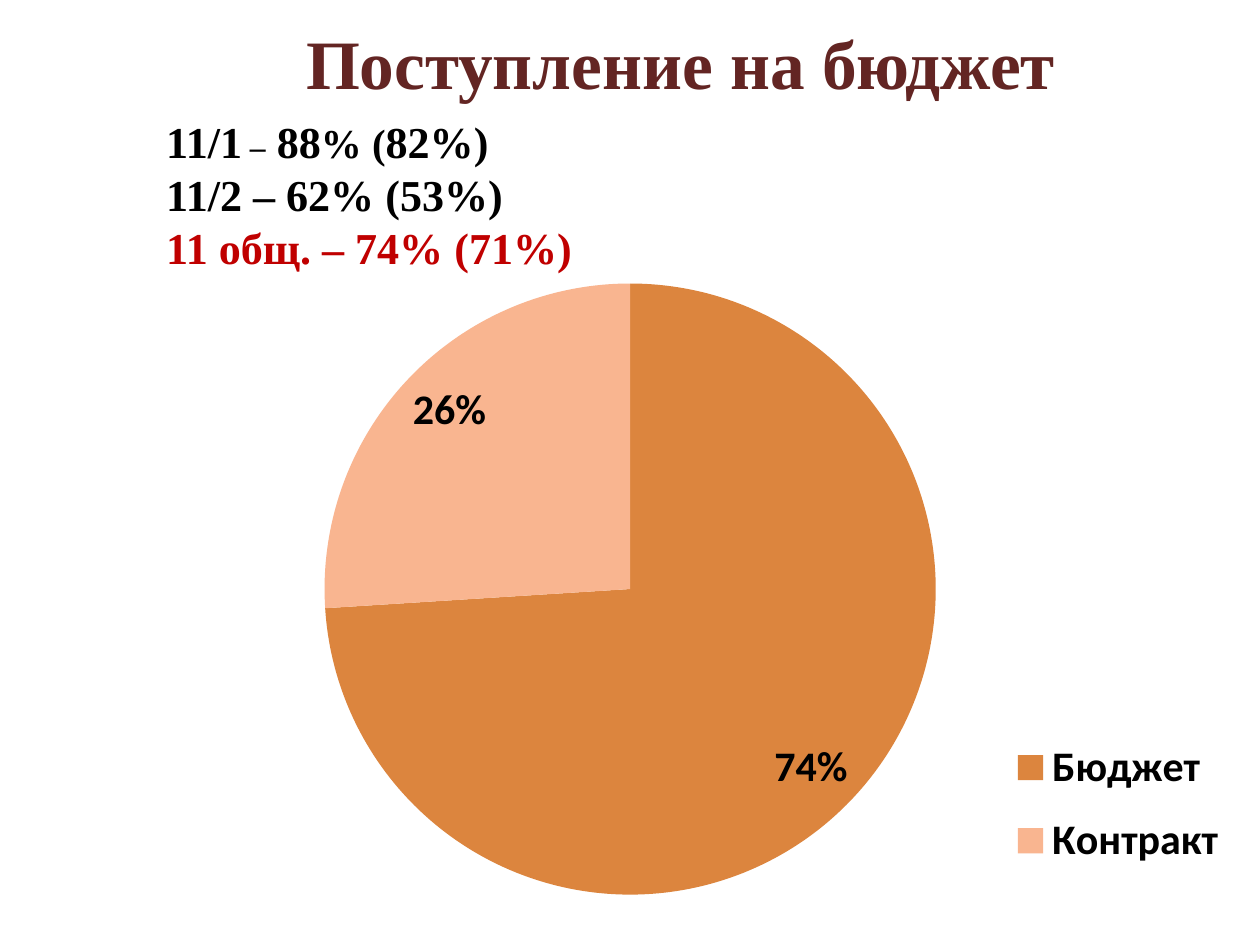
"""Build a slide showing the share of pupils admitted to state-funded places."""
from lxml import etree
from pptx import Presentation
from pptx.chart.data import CategoryChartData
from pptx.dml.color import RGBColor
from pptx.enum.chart import XL_CHART_TYPE, XL_LABEL_POSITION, XL_LEGEND_POSITION
from pptx.enum.text import PP_ALIGN
from pptx.util import Pt

PIE = XL_CHART_TYPE.PIE
INSIDE_END = XL_LABEL_POSITION.INSIDE_END
LEGEND_RIGHT = XL_LEGEND_POSITION.RIGHT
CENTER = PP_ALIGN.CENTER
LEFT = PP_ALIGN.LEFT
CHART_NAMESPACE = "http://schemas.openxmlformats.org/drawingml/2006/chart"

THEME = {
    "title_font": "Times New Roman",
    "chart_font": "Calibri",
    "title": RGBColor.from_string("632523"),
    "text": RGBColor.from_string("000000"),
    "total": RGBColor.from_string("C00000"),
    "slices": [RGBColor.from_string("DC853E"), RGBColor.from_string("F9B590")],
    "title_size": 39.6,
    "list_size": 25.2,
    "percent_size": 23.4,
    "dash_size": 18,
    "chart_size": 24,
}


def add_lines(slide, left, top, width, height, lines, alignment, spacing):
    """Add a text box from (colour, [(text, size), ...]) lines."""
    text_frame = slide.shapes.add_textbox(Pt(left), Pt(top), Pt(width), Pt(height)).text_frame
    text_frame.word_wrap = True
    text_frame.margin_left = text_frame.margin_right = 0
    text_frame.margin_top = text_frame.margin_bottom = 0
    for index, (color, pieces) in enumerate(lines):
        paragraph = text_frame.paragraphs[0] if index == 0 else text_frame.add_paragraph()
        paragraph.alignment = alignment
        paragraph.line_spacing = spacing
        for text, size in pieces:
            run = paragraph.add_run()
            run.text = text
            run.font.name = THEME["title_font"]
            run.font.size = Pt(size)
            run.font.bold = True
            run.font.color.rgb = color


def set_layout(parent, position, **settings):
    """Place a chart part by fractions of the chart area."""
    for old_layout in parent.findall(f"{{{CHART_NAMESPACE}}}layout"):
        parent.remove(old_layout)
    layout = etree.Element(f"{{{CHART_NAMESPACE}}}layout")
    manual = etree.SubElement(layout, f"{{{CHART_NAMESPACE}}}manualLayout")
    for name, value in settings.items():
        etree.SubElement(manual, f"{{{CHART_NAMESPACE}}}{name}").set("val", str(value))
    parent.insert(position, layout)


presentation = Presentation()
presentation.slide_width = Pt(720)
presentation.slide_height = Pt(540)
slide = presentation.slides.add_slide(presentation.slide_layouts[6])

title = [(THEME["title"], [("Поступление на бюджет", THEME["title_size"])])]
add_lines(slide, 88, 11.5, 602, 46, title, CENTER, 1.0)

list_size = THEME["list_size"]
results = [
    (THEME["text"], [
        ("11/1", list_size),
        (" –", THEME["dash_size"]),
        (" 88", list_size),
        ("% (", THEME["percent_size"]),
        ("82%)", list_size),
    ]),
    (THEME["text"], [("11/2 – 62% (53%)", list_size)]),
    (THEME["total"], [("11 общ. – 74% (71%)", list_size)]),
]
add_lines(slide, 95, 65.5, 595, 91, results, LEFT, Pt(30.3))

chart_data = CategoryChartData(number_format="0%")
chart_data.categories = ["Бюджет", "Контракт"]
chart_data.add_series("Series 1", [0.74, 0.26])
chart = slide.shapes.add_chart(PIE, Pt(93.6), Pt(162), Pt(612.7), Pt(356.4), chart_data).chart
chart.has_title = False
chart.font.name = THEME["chart_font"]
chart.font.size = Pt(THEME["chart_size"])
chart.font.bold = True
chart.font.color.rgb = THEME["text"]

plot = chart.plots[0]
plot.vary_by_categories = True
for index, color in enumerate(THEME["slices"]):
    fill = plot.series[0].points[index].format.fill
    fill.solid()
    fill.fore_color.rgb = color

plot.has_data_labels = True
labels = plot.data_labels
labels.show_value = True
labels.show_percentage = False
labels.number_format = "0%"
labels.number_format_is_linked = False
labels.position = INSIDE_END
labels.font.size = Pt(THEME["chart_size"])
labels.font.bold = True

chart.has_legend = True
chart.legend.position = LEGEND_RIGHT
chart.legend.include_in_layout = False
chart.legend.font.size = Pt(THEME["chart_size"])
chart.legend.font.bold = True

plot_area = chart.element.find(f".//{{{CHART_NAMESPACE}}}plotArea")
legend = chart.element.find(f".//{{{CHART_NAMESPACE}}}legend")
set_layout(plot_area, 0, layoutTarget="inner", xMode="edge", yMode="edge",
           x=0, y=0, w=0.87, h=0.98)
set_layout(legend, 1, xMode="edge", yMode="edge", x=0.78, y=0.7, w=0.22, h=0.27)

presentation.save("out.pptx")
